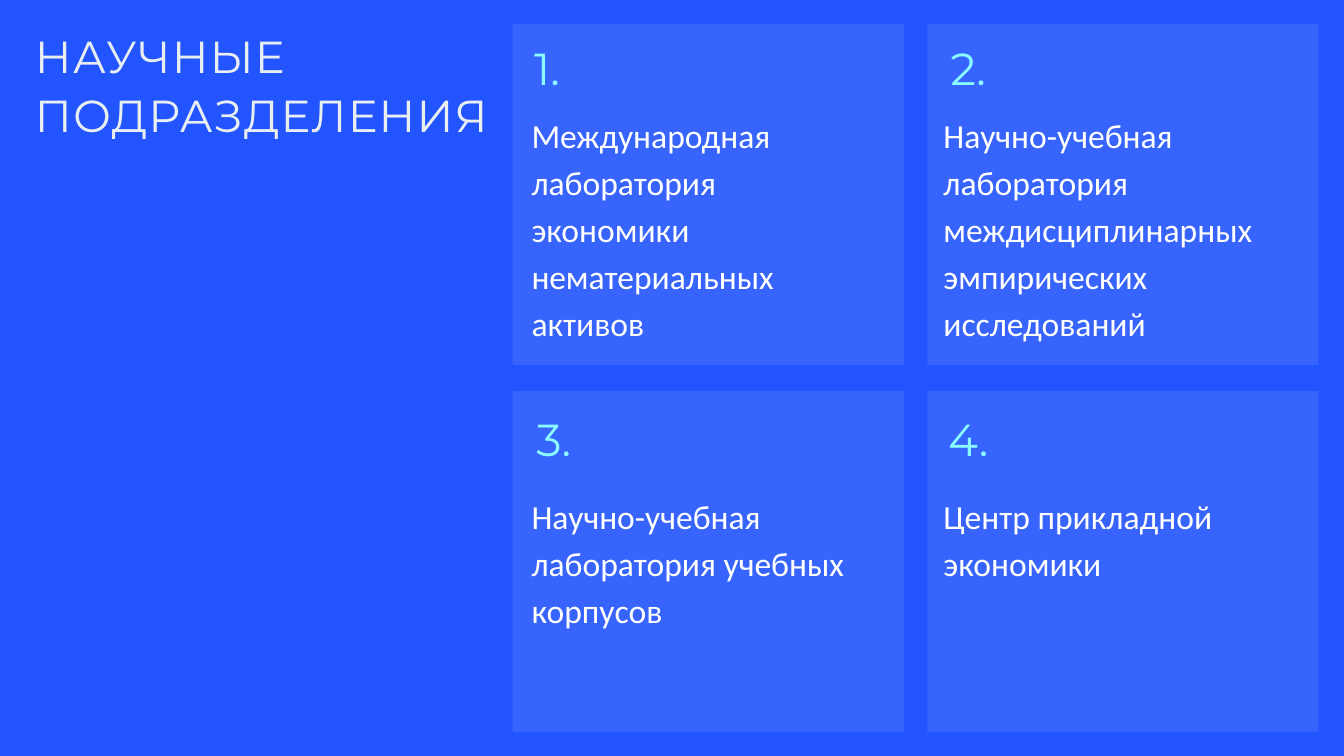
from lxml import etree
from pptx import Presentation
from pptx.dml.color import RGBColor
from pptx.enum import shapes, text
from pptx.oxml import ns
from pptx.util import Inches, Pt

BLUE, PALE, WHITE, AQUA = "2255FF", "E8EEF1", "FFFFFF", "8AFBFF"
LEFT, TOP = 7.63, 0.36
WIDE, HIGH = 5.82, 5.07
STEP_X, STEP_Y = 6.17, 5.46

UNITS = [
    (["Международная лаборатория", "экономики нематериальных", "активов"],
     7.77, 1.61, 4.9, 3.46),
    (["Научно-учебная лаборатория междисциплинарных эмпирических исследований"],
     14.04, 1.61, 5.36, 3.46),
    (["Научно-учебная лаборатория учебных корпусов"], 7.87, 7.28, 4.9, 2.07),
    (["Центр прикладной экономики"], 14.04, 7.28, 4.9, 1.37),
]


def color(code):
    return RGBColor.from_string(code)


def place(shape, x, y, w, h):
    shape.left, shape.top = Inches(x), Inches(y)
    shape.width, shape.height = Inches(w), Inches(h)


def write(shape, lines, font, size, code, pitch, align=text.PP_ALIGN.LEFT):
    frame = shape.text_frame
    frame.word_wrap = True
    frame.auto_size = text.MSO_AUTO_SIZE.NONE
    frame.vertical_anchor = text.MSO_ANCHOR.TOP
    frame.margin_left = frame.margin_right = Inches(0)
    frame.margin_top = frame.margin_bottom = Inches(0)
    for i, line in enumerate(lines):
        para = frame.paragraphs[0] if i == 0 else frame.add_paragraph()
        para.alignment = align
        para.line_spacing = Pt(pitch)
        para.space_before = Pt(0)
        run = para.add_run()
        run.text = line
        run.font.name = font
        run.font.size = Pt(size)
        run.font.color.rgb = color(code)


def add_title(slide, words):
    title = slide.shapes.title
    place(title, 0.52, 0.36, 7.57, 1.71)
    write(title, [words], "Montserrat", 48, PALE, 62.9)
    run = title.text_frame.paragraphs[0].runs[0]
    run.font._element.set("spc", "140")


def add_card(slide, x, y):
    card = slide.shapes.add_shape(
        shapes.MSO_SHAPE.RECTANGLE, Inches(x), Inches(y), Inches(WIDE), Inches(HIGH))
    card.shadow.inherit = False
    card.line.fill.background()
    card.fill.solid()
    card.fill.fore_color.rgb = color(PALE)
    tint = card._element.spPr.find(".//" + ns.qn("a:srgbClr"))
    etree.SubElement(tint, ns.qn("a:alpha")).set("val", "10000")


def add_text(slide, x, y, w, h, lines, *style):
    box = slide.shapes.add_textbox(Inches(x), Inches(y), Inches(w), Inches(h))
    write(box, lines, *style)


def main():
    deck = Presentation()
    deck.slide_width, deck.slide_height = Inches(20), Inches(11.25)
    slide = deck.slides.add_slide(deck.slide_layouts[5])
    slide.background.fill.solid()
    slide.background.fill.fore_color.rgb = color(BLUE)
    add_title(slide, "НАУЧНЫЕ ПОДРАЗДЕЛЕНИЯ")
    for i, (lines, mark, y, w, h) in enumerate(UNITS):
        row, col = divmod(i, 2)
        add_card(slide, LEFT + col * STEP_X, TOP + row * STEP_Y)
        add_text(slide, (7.91, 14.04)[col], y, w, h, lines, "Calibri", 36, WHITE, 50.4)
        add_text(slide, mark, (0.6, 6.12)[row], 0.74, 0.82, [f"{i + 1}."],
                 "Montserrat", 48, AQUA, 57.6, text.PP_ALIGN.CENTER)
    deck.save("out.pptx")


if __name__ == "__main__":
    main()
